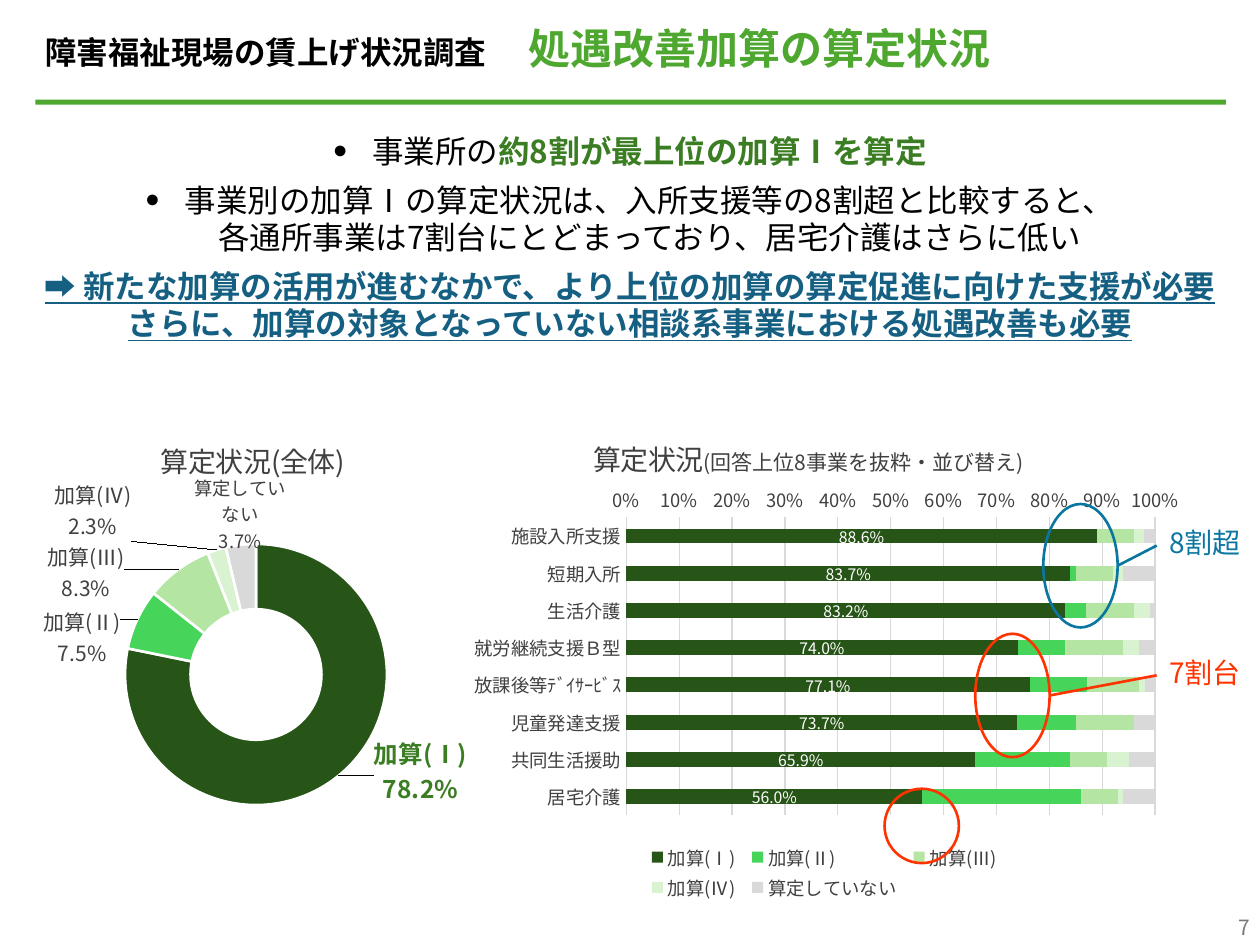
from lxml import etree
from pptx import Presentation
from pptx.chart.data import CategoryChartData
from pptx.dml.color import RGBColor
from pptx.enum.chart import XL_CHART_TYPE, XL_LABEL_POSITION, XL_LEGEND_POSITION, XL_TICK_MARK
from pptx.enum.shapes import MSO_CONNECTOR, MSO_SHAPE
from pptx.enum.text import MSO_ANCHOR, PP_ALIGN
from pptx.oxml.ns import qn
from pptx.util import Inches, Pt

FONT = "Noto Sans CJK JP"
GREEN, DARK_GREEN, TEAL, BLUE, RED = "4EA72E", "3B7D23", "156082", "0B76A0", "FF3300"
GREY, PALE_GREY = "404040", "D9D9D9"
LEVELS = ["加算(Ⅰ)", "加算(Ⅱ)", "加算(Ⅲ)", "加算(Ⅳ)", "算定していない"]
LEVEL_COLORS = ["275417", "47D45A", "B4E5A2", "D9F2D0", PALE_GREY]


def rgb(hex_color):
    return RGBColor.from_string(hex_color)


def style_font(font, size, color="000000", bold=False, underline=False):
    font.size, font.bold, font.name = Pt(size), bold, FONT
    if underline:
        font.underline = True
    font.color.rgb = rgb(color)
    east_asian = etree.Element(qn("a:ea"), typeface=FONT)
    font._element.find(qn("a:latin")).addnext(east_asian)


def add_text(paragraph, text, **style):
    for number, line in enumerate(text.split("\n")):
        if number:
            paragraph.add_line_break()
        run = paragraph.add_run()
        run.text = line
        style_font(run.font, **style)


def set_box(shape, box):
    shape.left, shape.top, shape.width, shape.height = map(Inches, box)


def set_frame(shape, insets=(0.08, 0.04, 0.08, 0.04), wrap=True, anchor=MSO_ANCHOR.TOP):
    frame = shape.text_frame
    frame.word_wrap, frame.vertical_anchor = wrap, anchor
    (frame.margin_left, frame.margin_top,
     frame.margin_right, frame.margin_bottom) = map(Inches, insets)
    return frame


def add_label(slide, box, text, align=PP_ALIGN.LEFT, anchor=MSO_ANCHOR.TOP,
              insets=(0.08, 0.04, 0.08, 0.04), **style):
    label = slide.shapes.add_textbox(*map(Inches, box))
    paragraph = set_frame(label, insets, False, anchor).paragraphs[0]
    paragraph.alignment = align
    add_text(paragraph, text, **style)


def add_header(slide, box):
    title = slide.shapes.title
    set_box(title, box)
    paragraph = set_frame(title, anchor=MSO_ANCHOR.MIDDLE).paragraphs[0]
    paragraph.alignment, paragraph.line_spacing = PP_ALIGN.LEFT, 0.9
    add_text(paragraph, "障害福祉現場の賃上げ状況調査", size=18, bold=True)
    add_text(paragraph, "\u3000", size=24, bold=True)
    add_text(paragraph, "処遇改善加算の算定状況", size=24, color=GREEN, bold=True)
    left, _, width, _ = box
    rule = slide.shapes.add_shape(MSO_SHAPE.RECTANGLE,
                                  *map(Inches, (left, 0.79, width, 0.04)))
    rule.shadow.inherit = False
    rule.fill.solid()
    rule.fill.fore_color.rgb = rgb(GREEN)
    rule.line.fill.background()


def add_bullet(paragraph):
    properties = paragraph._p.get_or_add_pPr()
    properties.set("marL", str(Inches(0.31)))
    properties.set("indent", str(-Inches(0.31)))
    etree.SubElement(properties, qn("a:buSzPct"), val="125000")
    etree.SubElement(properties, qn("a:buFont"), typeface="Arial")
    etree.SubElement(properties, qn("a:buChar"), char="•")


def add_findings(slide, box):
    plain, strong = {"size": 18}, {"size": 18, "color": DARK_GREEN, "bold": True}
    conclusion = {"size": 18, "color": TEAL, "bold": True, "underline": True}
    findings = [
        (True, [("事業所の", plain), ("約8割が最上位の加算Ⅰを算定", strong)]),
        (True, [("事業別の加算Ⅰの算定状況は、入所支援等の8割超と比較すると、\n"
                 "各通所事業は7割台にとどまっており、居宅介護はさらに低い", plain)]),
        (False, [("➡ 新たな加算の活用が進むなかで、より上位の加算の算定促進に向けた支援が必要\n"
                  "さらに、加算の対象となっていない相談系事業における処遇改善も必要", conclusion)]),
    ]
    frame = set_frame(slide.shapes.add_textbox(*map(Inches, box)))
    for number, (bulleted, parts) in enumerate(findings):
        paragraph = frame.add_paragraph() if number else frame.paragraphs[0]
        paragraph.alignment, paragraph.space_after = PP_ALIGN.CENTER, Pt(6)
        if bulleted:
            add_bullet(paragraph)
        for text, style in parts:
            add_text(paragraph, text, **style)


def make_layout(x, y, width=None, height=None, edge=False, inner=False):
    layout = etree.Element(qn("c:layout"))
    manual = etree.SubElement(layout, qn("c:manualLayout"))
    settings = [("layoutTarget", "inner" if inner else None),
                ("xMode", "edge" if edge else None), ("yMode", "edge" if edge else None),
                ("x", x), ("y", y), ("w", width), ("h", height)]
    for tag, value in settings:
        if value is not None:
            etree.SubElement(manual, qn(f"c:{tag}"), val=str(value))
    return layout


def place_part(part, after, *position, **options):
    """Give a chart part a manual layout behind its child named after."""
    for old in part.findall(qn("c:layout")):
        part.remove(old)
    previous = part.find(qn(after)) if after else None
    index = 0 if previous is None else part.index(previous) + 1
    part.insert(index, make_layout(*position, **options))


def add_chart(slide, box, kind, data, title_parts, title_at, plot_at):
    chart = slide.shapes.add_chart(kind, *map(Inches, box), data).chart
    style_font(chart.font, 10.5, GREY)
    chart.has_title = True
    paragraph = chart.chart_title.text_frame.paragraphs[0]
    for text, size in title_parts:
        add_text(paragraph, text, size=size, color=GREY)
    chart.chart_title.include_in_layout = False
    root = chart.element.chart
    place_part(root.find(qn("c:title")), "c:tx", *title_at, edge=True)
    place_part(root.plotArea, None, *plot_at, edge=True, inner=True)
    return chart


def add_service_chart(slide, box):
    data = CategoryChartData(number_format="0.0%")
    data.categories = ["施設入所支援", "短期入所", "生活介護", "就労継続支援Ｂ型",
                       "放課後等ﾃﾞｲｻｰﾋﾞｽ", "児童発達支援", "共同生活援助", "居宅介護"]
    shares = [[0.886, 0.837, 0.832, 0.74, 0.771, 0.737, 0.659, 0.56],
              [0, 0.01, 0.04, 0.09, 0.11, 0.11, 0.18, 0.3],
              [0.07, 0.07, 0.09, 0.11, 0.1, 0.11, 0.07, 0.07],
              [0.02, 0.02, 0.03, 0.03, 0.01, 0, 0.04, 0.01],
              [0.02, 0.06, 0.01, 0.03, 0.02, 0.04, 0.05, 0.06]]
    for level, values in zip(LEVELS, shares):
        data.add_series(level, values)
    chart = add_chart(slide, box, XL_CHART_TYPE.BAR_STACKED_100, data,
                      [("算定状況", 16), ("(回答上位8事業を抜粋・並び替え)", 12)],
                      (0.18, 0.05), (0.23, 0.22, 0.72, 0.6))
    plot = chart.plots[0]
    plot.gap_width, plot.overlap, plot.vary_by_categories = 150, 100, False
    for series, color in zip(plot.series, LEVEL_COLORS):
        series.format.fill.solid()
        series.format.fill.fore_color.rgb = rgb(color)
    labels = plot.series[0].data_labels
    labels.show_value, labels.position = True, XL_LABEL_POSITION.CENTER
    labels.number_format, labels.number_format_is_linked = "0.0%", False
    style_font(labels.font, 9, "FFFFFF")
    # Axes and legend
    for axis in (chart.category_axis, chart.value_axis):
        axis.major_tick_mark = axis.minor_tick_mark = XL_TICK_MARK.NONE
        style_font(axis.tick_labels.font, 10.5, GREY)
    chart.category_axis.reverse_order = True
    chart.value_axis.major_unit = 0.1
    chart.value_axis.tick_labels.number_format = "0%"
    chart.value_axis.tick_labels.number_format_is_linked = False
    chart.value_axis.format.line.fill.background()
    for line in (chart.category_axis.format.line, chart.value_axis.major_gridlines.format.line):
        line.color.rgb, line.width = rgb(PALE_GREY), Pt(0.75)
    chart.has_legend = True
    chart.legend.position = XL_LEGEND_POSITION.BOTTOM
    chart.legend.include_in_layout = False
    style_font(chart.legend.font, 10.5, GREY)
    place_part(chart.legend._element, "c:legendPos", 0.25, 0.87, 0.5, 0.13, edge=True)


def show_share(labels):
    """Show category and percentage on two lines."""
    for tag, value in (("showVal", "0"), ("showCatName", "1"), ("showPercent", "1")):
        labels.find(qn(f"c:{tag}")).set("val", value)
    separator = etree.Element(qn("c:separator"))
    separator.text = "\n"
    labels.find(qn("c:showBubbleSize")).addnext(separator)


def add_total_chart(slide, box):
    data = CategoryChartData()
    data.categories = LEVELS
    data.add_series("Series 1", [78.2, 7.5, 8.3, 2.3, 3.7])
    chart = add_chart(slide, box, XL_CHART_TYPE.DOUGHNUT, data, [("算定状況(全体)", 16)],
                      (0.27, 0.06), (0.2, 0.34, 0.59, 0.66))
    chart.has_legend = False
    series = chart.plots[0].series[0]
    labels = series.data_labels
    labels.number_format, labels.number_format_is_linked = "0.0%", False
    style_font(labels.font, 12, GREY)
    show_share(labels._element)
    # Label offset from its segment, size, colour, bold
    label_styles = [(0.23, 0.05, 14, DARK_GREEN, True), (-0.19, 0.01, 12, GREY, False),
                    (-0.25, -0.06, 12, GREY, False), (-0.3, -0.18, 12, GREY, False),
                    (-0.01, -0.16, 10.5, GREY, False)]
    for number, (x, y, size, color, bold) in enumerate(label_styles):
        point = series.points[number]
        point.format.fill.solid()
        point.format.fill.fore_color.rgb = rgb(LEVEL_COLORS[number])
        point.format.line.color.rgb, point.format.line.width = rgb("FFFFFF"), Pt(1.5)
        style_font(point.data_label.font, size, color, bold)
        label = labels._element.findall(qn("c:dLbl"))[number]
        show_share(label)
        place_part(label, "c:idx", x, y)
        number_format = etree.Element(qn("c:numFmt"), formatCode="0.0%", sourceLinked="0")
        label.find(qn("c:layout")).addnext(number_format)


def add_ring(slide, box, color):
    ring = slide.shapes.add_shape(MSO_SHAPE.OVAL, *map(Inches, box))
    ring.shadow.inherit = False
    ring.fill.background()
    ring.line.color.rgb, ring.line.width = rgb(color), Pt(1.5)


def add_callout(slide, ring_box, label_top, text, color):
    add_ring(slide, ring_box, color)
    left, top, width, height = ring_box
    label_left = 9.18
    add_label(slide, (label_left, label_top, 0.82, 0.39), text,
              insets=(0.1, 0.04, 0.1, 0.08), size=16, color=color)
    ends = (left + width, top + height / 2, label_left, label_top + 0.2)
    leader = slide.shapes.add_connector(MSO_CONNECTOR.STRAIGHT, *map(Inches, ends))
    leader.line.color.rgb, leader.line.width = rgb(color), Pt(1.5)
    etree.SubElement(leader._element.spPr, qn("a:effectLst"))


def main():
    deck = Presentation()
    deck.slide_width, deck.slide_height = Inches(10), Inches(7.5)
    slide = deck.slides.add_slide(deck.slide_layouts[5])
    add_header(slide, (0.28, 0.18, 9.45, 0.44))
    add_label(slide, (9.41, 7.22, 0.59, 0.28), "7", align=PP_ALIGN.RIGHT,
              anchor=MSO_ANCHOR.BOTTOM, size=12, color="797979")
    add_findings(slide, (0, 1.01, 10, 1.76))
    add_service_chart(slide, (3.63, 3.24, 5.83, 3.94))
    add_total_chart(slide, (0.28, 3.25, 3.54, 3.15))
    add_callout(slide, (8.28, 4, 0.59, 0.98), 4.13, "8割超", BLUE)
    add_callout(slide, (7.74, 5.03, 0.59, 0.98), 5.16, "7割台", RED)
    add_ring(slide, (7.02, 6.26, 0.59, 0.59), RED)
    deck.save("out.pptx")


if __name__ == "__main__":
    main()
